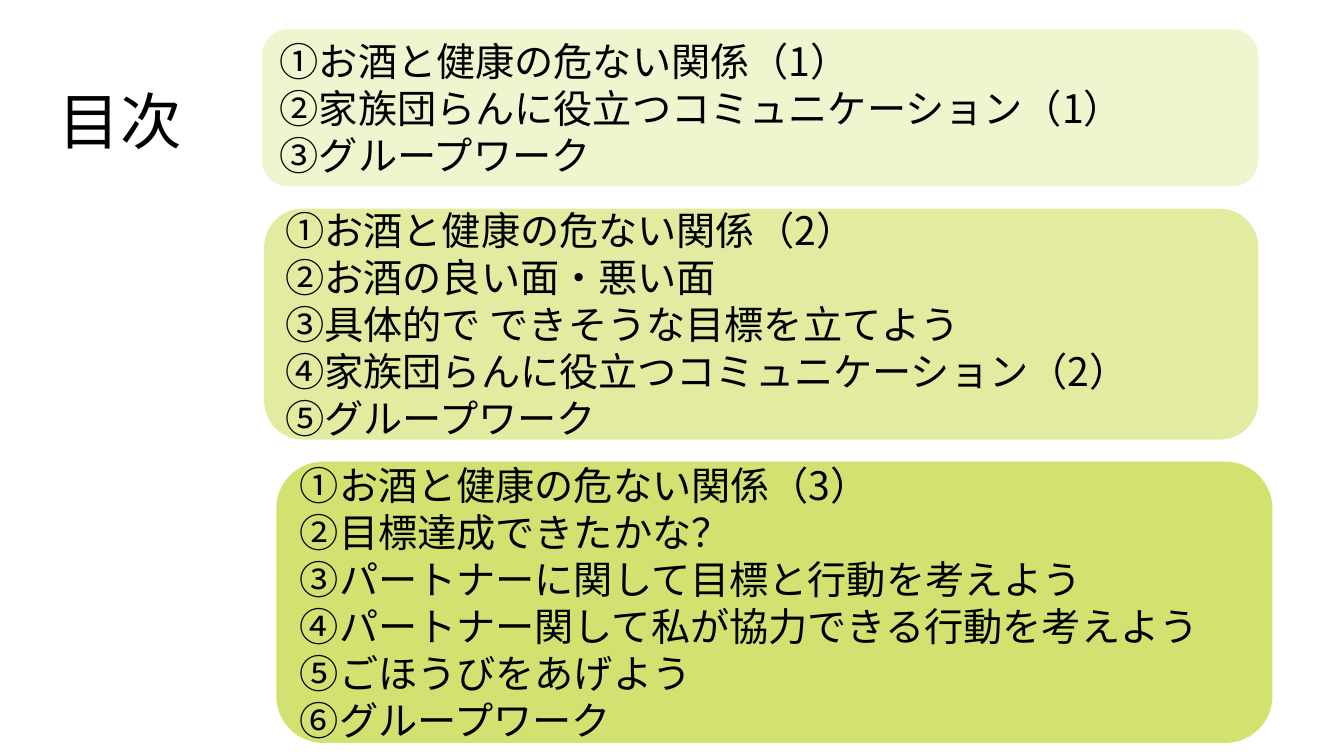
from dataclasses import dataclass

from lxml import etree
from pptx import Presentation
from pptx.dml.color import RGBColor
from pptx.enum.shapes import MSO_SHAPE
from pptx.enum.text import MSO_ANCHOR, PP_ALIGN
from pptx.oxml.ns import qn
from pptx.slide import Slide
from pptx.util import Inches, Pt

ROUNDED = MSO_SHAPE.ROUNDED_RECTANGLE
MIDDLE, BOTTOM = MSO_ANCHOR.MIDDLE, MSO_ANCHOR.BOTTOM
LEFT = PP_ALIGN.LEFT

FONT = "Noto Sans CJK JP"
BLACK = RGBColor(0x00, 0x00, 0x00)
PALE_GREEN = RGBColor(0xF0, 0xF5, 0xD0)
LIGHT_GREEN = RGBColor(0xE2, 0xEB, 0xA0)
GREEN = RGBColor(0xD3, 0xE1, 0x71)


@dataclass
class Session:
    left: float
    top: float
    width: float
    height: float
    fill: RGBColor
    topics: list[str]


SESSIONS = [
    Session(2.6, 0.29, 9.88, 1.56, PALE_GREEN, [
        "①お酒と健康の危ない関係（1）",
        "②家族団らんに役立つコミュニケーション（1）",
        "③グループワーク",
    ]),
    Session(2.62, 2.07, 9.86, 2.29, LIGHT_GREEN, [
        "①お酒と健康の危ない関係（2）",
        "②お酒の良い面・悪い面",
        "③具体的で できそうな目標を立てよう",
        "④家族団らんに役立つコミュニケーション（2）",
        "⑤グループワーク",
    ]),
    Session(2.74, 4.58, 9.88, 2.79, GREEN, [
        "①お酒と健康の危ない関係（3）",
        "②目標達成できたかな？",
        "③パートナーに関して目標と行動を考えよう",
        "④パートナー関して私が協力できる行動を考えよう",
        "⑤ごほうびをあげよう",
        "⑥グループワーク",
    ]),
]


def write_lines(tf, lines: list[str], size: int, anchor: MSO_ANCHOR) -> None:
    """Fill a text frame with one left-aligned paragraph per line."""
    tf.text = "\n".join(lines)
    tf.word_wrap = True
    tf.vertical_anchor = anchor
    for p in tf.paragraphs:
        p.alignment = LEFT
        p.font.size = Pt(size)
        p.font.name = FONT
        p.font.color.rgb = BLACK
        # Japanese text takes the East Asian typeface
        defaults = p.font._element if hasattr(p.font, "_element") else p.font._rPr
        etree.SubElement(defaults, qn("a:ea"), typeface=FONT)


def add_title(s: Slide, text: str) -> None:
    sp = s.shapes.title
    sp.left, sp.top = Inches(0.48), Inches(0.31)
    sp.width, sp.height = Inches(10.25), Inches(1.31)
    write_lines(sp.text_frame, [text], 44, BOTTOM)
    sp.text_frame.paragraphs[0].line_spacing = 0.9


def add_session(s: Slide, session: Session) -> None:
    sp = s.shapes.add_shape(ROUNDED, Inches(session.left), Inches(session.top),
                            Inches(session.width), Inches(session.height))
    sp.shadow.inherit = False
    sp.fill.solid()
    sp.fill.fore_color.rgb = session.fill
    sp.line.fill.background()
    write_lines(sp.text_frame, session.topics, 28, MIDDLE)


def main() -> None:
    prs = Presentation()
    prs.slide_width, prs.slide_height = Inches(13.33), Inches(7.5)
    s = prs.slides.add_slide(prs.slide_layouts[5])

    # Heading
    add_title(s, "目次")

    # One panel per session
    for session in SESSIONS:
        add_session(s, session)

    prs.save("out.pptx")


if __name__ == "__main__":
    main()
